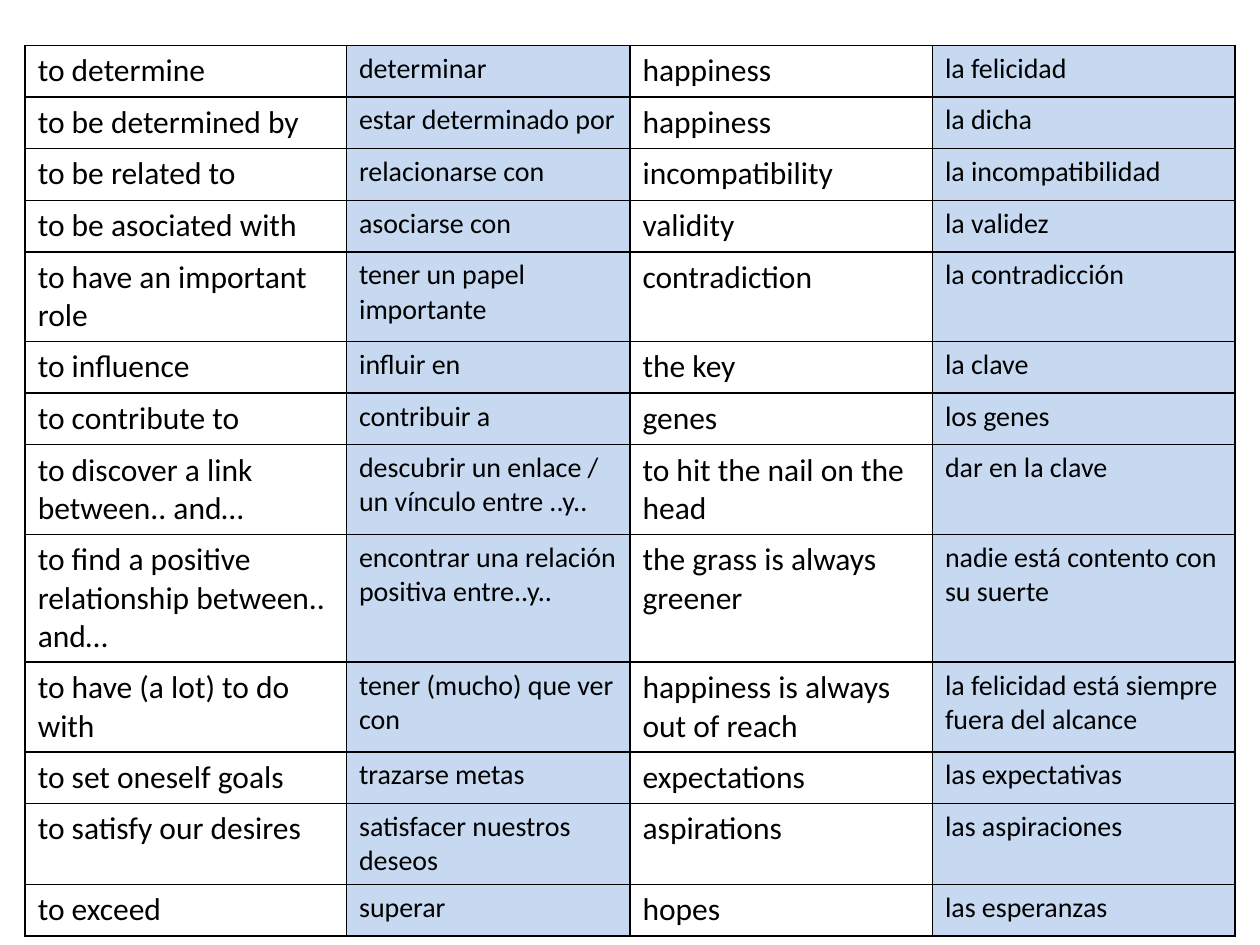
import pptx
import pptx.dml.color
import pptx.oxml.ns
import pptx.util
import lxml.etree

Inches = pptx.util.Inches
COLOURS = {"text": "000000", "border": "000000", "spanish": "C6D9F1"}
COLUMN_WIDTHS = [2.55, 2.25, 2.4, 2.4]
ROW_HEIGHT = 0.41
VOCABULARY = [
    ("to determine", "determinar", "happiness", "la felicidad"),
    ("to be determined by", "estar determinado por", "happiness", "la dicha"),
    ("to be related to", "relacionarse con", "incompatibility", "la incompatibilidad"),
    ("to be asociated with", "asociarse con", "validity", "la validez"),
    ("to have an important role", "tener un papel importante",
     "contradiction", "la contradicción"),
    ("to influence", "influir en", "the key", "la clave"),
    ("to contribute to", "contribuir a", "genes", "los genes"),
    ("to discover a link between.. and…", "descubrir un enlace / un vínculo entre ..y..",
     "to hit the nail on the head", "dar en la clave"),
    ("to find a positive relationship between.. and…",
     "encontrar una relación positiva entre..y..",
     "the grass is always greener", "nadie está contento con su suerte"),
    ("to have (a lot) to do with", "tener (mucho) que ver con",
     "happiness is always out of reach", "la felicidad está siempre fuera del alcance"),
    ("to set oneself goals", "trazarse metas", "expectations", "las expectativas"),
    ("to satisfy our desires", "satisfacer nuestros deseos",
     "aspirations", "las aspiraciones"),
    ("to exceed", "superar", "hopes", "las esperanzas"),
]


def colour(name):
    return pptx.dml.color.RGBColor.from_string(COLOURS[name])


def add_borders(cell):
    properties = cell._tc.get_or_add_tcPr()
    qn = pptx.oxml.ns.qn
    for side in ("a:lnL", "a:lnR", "a:lnT", "a:lnB"):
        line = lxml.etree.SubElement(properties, qn(side), w=str(pptx.util.Pt(1)))
        fill = lxml.etree.SubElement(line, qn("a:solidFill"))
        lxml.etree.SubElement(fill, qn("a:srgbClr"), val=COLOURS["border"])


deck = pptx.Presentation()
deck.slide_width = Inches(10)
deck.slide_height = Inches(7.5)
page = deck.slides.add_slide(deck.slide_layouts[6])

frame = page.shapes.add_table(
    len(VOCABULARY), len(COLUMN_WIDTHS), Inches(0.2), Inches(0.36),
    Inches(sum(COLUMN_WIDTHS)), Inches(ROW_HEIGHT * len(VOCABULARY)))
table = frame.table
table.first_row = False
table.horz_banding = False
for column, width in zip(table.columns, COLUMN_WIDTHS):
    column.width = Inches(width)

for row, words in zip(table.rows, VOCABULARY):
    row.height = Inches(ROW_HEIGHT)
    for index, (cell, words_in_cell) in enumerate(zip(row.cells, words)):
        is_spanish = index % 2 == 1
        add_borders(cell)
        if is_spanish:
            cell.fill.solid()
            cell.fill.fore_color.rgb = colour("spanish")
        else:
            cell.fill.background()
        span = cell.text_frame.paragraphs[0].add_run()
        span.text = words_in_cell
        span.font.name = "Calibri"
        span.font.size = pptx.util.Pt(16 if is_spanish else 18)
        span.font.color.rgb = colour("text")

deck.save("out.pptx")
